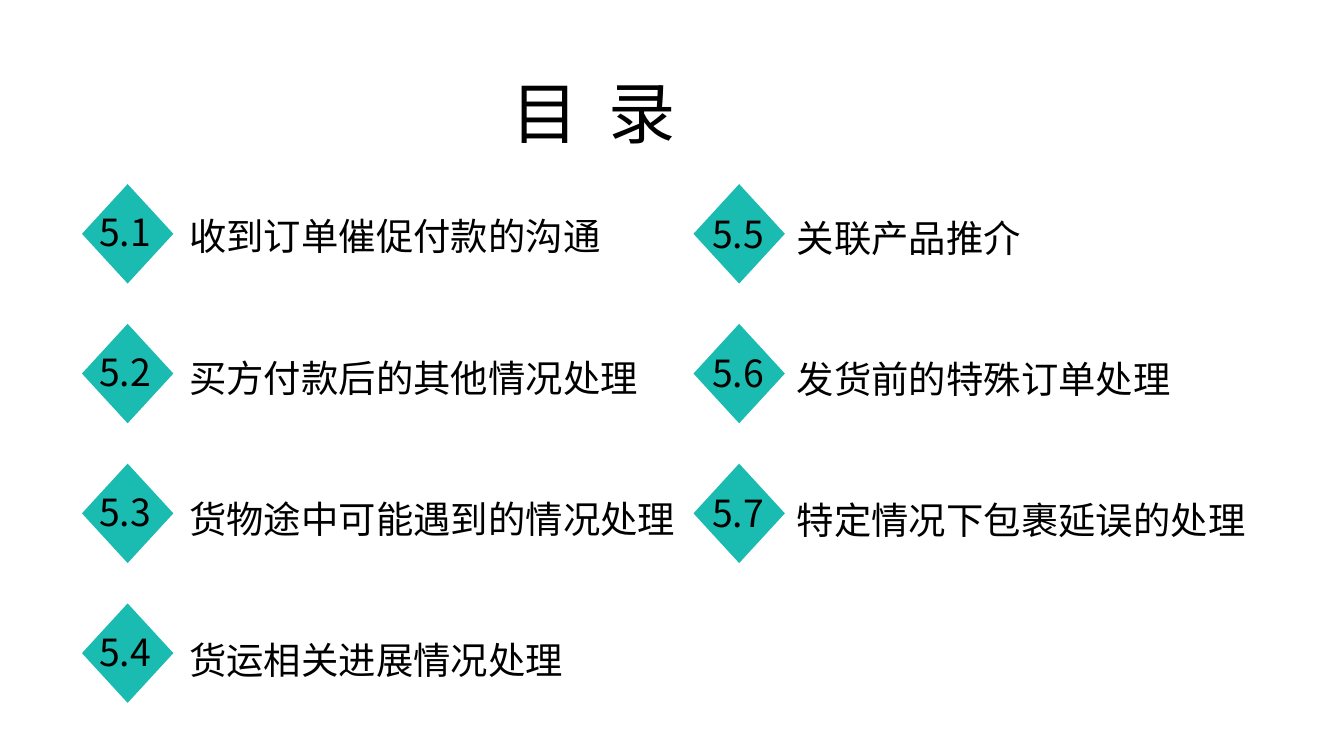
from dataclasses import dataclass

import pptx
import pptx.dml.color
import pptx.enum.shapes
import pptx.enum.text
import pptx.oxml.ns
import pptx.util
from pptx.util import Inches


@dataclass(frozen=True)
class Theme:
    font: str = "Noto Sans CJK SC"
    ink: str = "000000"
    accent: str = "1ABBB1"
    title_size: int = 36
    body_size: int = 20


THEME = Theme()
LEFT_ENTRIES = [
    ("5.1", "收到订单催促付款的沟通"),
    ("5.2", "买方付款后的其他情况处理"),
    ("5.3", "货物途中可能遇到的情况处理"),
    ("5.4", "货运相关进展情况处理"),
]
RIGHT_ENTRIES = [
    ("5.5", "关联产品推介"),
    ("5.6", "发货前的特殊订单处理"),
    ("5.7", "特定情况下包裹延误的处理"),
]
DIAMOND_PITCH = 1.04
LABEL_PITCH = 1.05


def add_run(paragraph, text, size):
    run = paragraph.add_run()
    run.text = text
    run.font.size = pptx.util.Pt(size)
    run.font.name = THEME.font
    run.font.color.rgb = pptx.dml.color.RGBColor.from_string(THEME.ink)
    properties = run.font._element
    east_asian = properties.makeelement(pptx.oxml.ns.qn("a:ea"), {"typeface": THEME.font})
    properties.append(east_asian)
    return run


def add_text_box(slide, left, top, width, height):
    """Add an empty wrapping text box and return its first paragraph."""
    box = slide.shapes.add_textbox(Inches(left), Inches(top), Inches(width), Inches(height))
    frame = box.text_frame
    frame.word_wrap = True
    frame.auto_size = pptx.enum.text.MSO_AUTO_SIZE.SHAPE_TO_FIT_TEXT
    return frame.paragraphs[0]


def add_title(slide, left, top, width, height):
    paragraph = add_text_box(slide, left, top, width, height)
    add_run(paragraph, "目", THEME.title_size)
    gap = add_run(paragraph, " ", THEME.title_size)
    gap.font._element.set("spc", "800")  # widens the gap between the two characters
    add_run(paragraph, "录", THEME.title_size)


def add_diamond(slide, left, top):
    diamond = slide.shapes.add_shape(
        pptx.enum.shapes.MSO_SHAPE.DIAMOND,
        Inches(left), Inches(top), Inches(0.68), Inches(0.74),
    )
    diamond.shadow.inherit = False
    diamond.fill.solid()
    diamond.fill.fore_color.rgb = pptx.dml.color.RGBColor.from_string(THEME.accent)
    diamond.line.fill.background()


def add_contents_column(slide, left, top, entries, number_offset, label_offset):
    """Stack numbered diamonds from left, top; offsets are (right, down) from there."""
    number_left, number_top = number_offset
    label_left, label_top = label_offset
    for row, (number, label) in enumerate(entries):
        diamond_top = top + row * DIAMOND_PITCH
        add_diamond(slide, left, diamond_top)
        paragraph = add_text_box(
            slide, left + number_left, diamond_top + number_top, 0.63, 0.44
        )
        add_run(paragraph, number, THEME.body_size)
        paragraph = add_text_box(
            slide, left + label_left, top + label_top + row * LABEL_PITCH, 3.84, 0.44
        )
        add_run(paragraph, label, THEME.body_size)


def main():
    presentation = pptx.Presentation()
    presentation.slide_width = Inches(10)
    presentation.slide_height = Inches(10) * 9 // 16
    slide = presentation.slides.add_slide(presentation.slide_layouts[6])
    add_title(slide, 3.71, 0.48, 2.05, 0.71)
    add_contents_column(slide, 0.61, 1.37, LEFT_ENTRIES, (0.03, 0.14), (0.7, 0.17))
    add_contents_column(slide, 5.16, 1.37, RIGHT_ENTRIES, (0.04, 0.15), (0.67, 0.18))
    presentation.save("out.pptx")


if __name__ == "__main__":
    main()
